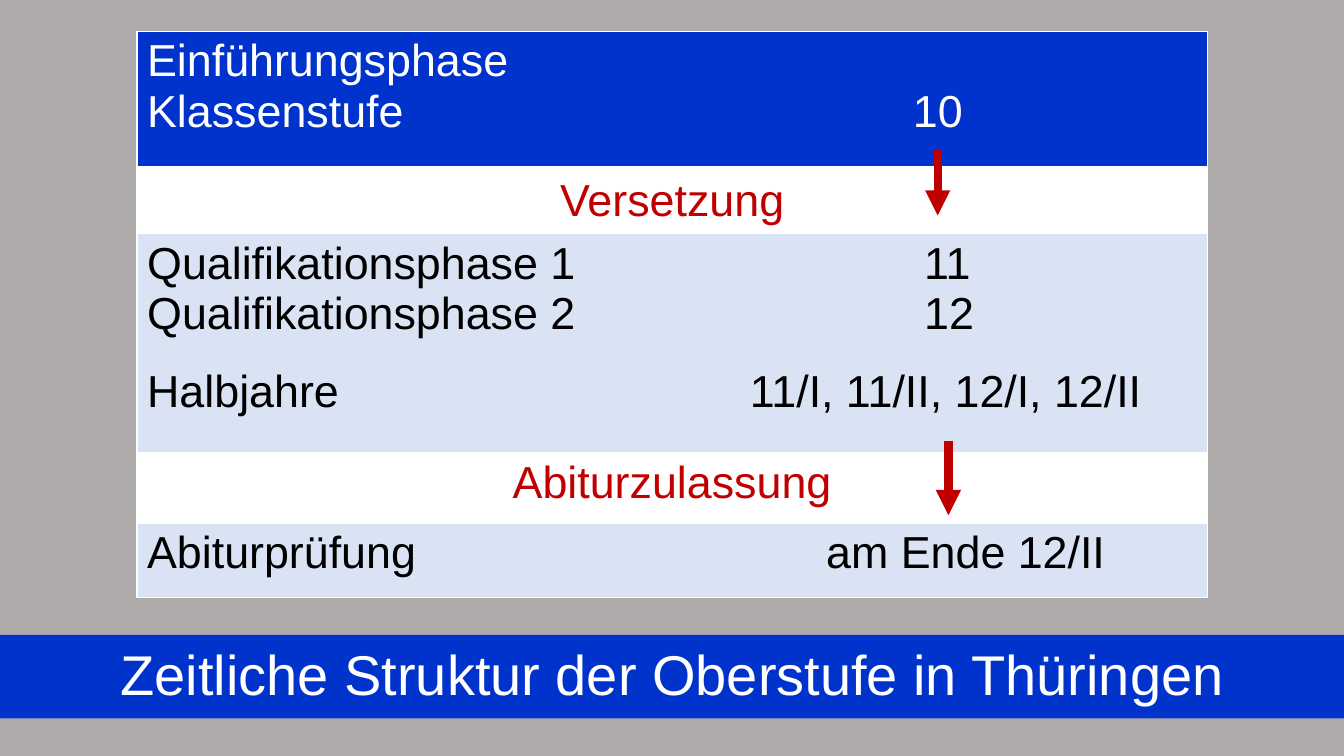
import pptx
import pptx.util
import pptx.dml.color
import pptx.enum.shapes
import pptx.enum.text
import pptx.oxml.ns
from lxml import etree

Pt = pptx.util.Pt
RGBColor = pptx.dml.color.RGBColor
PP_ALIGN = pptx.enum.text.PP_ALIGN
MSO_ANCHOR = pptx.enum.text.MSO_ANCHOR
qn = pptx.oxml.ns.qn

GREY = RGBColor(0xAF, 0xAB, 0xAB)
BLUE = RGBColor(0x00, 0x33, 0xCC)
PALE = RGBColor(0xDA, 0xE3, 0xF3)
RED = RGBColor(0xC0, 0x00, 0x00)
WHITE = RGBColor(0xFF, 0xFF, 0xFF)
BLACK = RGBColor(0x00, 0x00, 0x00)


def write(p, text, size=32, color=BLACK, align=PP_ALIGN.LEFT, before=0, spacing=1.0, tab=None):
    """Fill a paragraph; tab is the position in points of its one tab stop."""
    p.alignment, p.space_before, p.line_spacing = align, Pt(before), spacing
    if tab:
        tabs = etree.SubElement(p._p.get_or_add_pPr(), qn("a:tabLst"))
        etree.SubElement(tabs, qn("a:tab"), pos=str(Pt(tab)), algn="l")
    r = p.add_run()
    r.text = text
    r.font.name, r.font.size, r.font.color.rgb = "Arial", Pt(size), color


class Deck:
    def __init__(self):
        self.prs = pptx.Presentation()
        self.prs.slide_width, self.prs.slide_height = Pt(960), Pt(540)
        self.s = self.prs.slides.add_slide(self.prs.slide_layouts[5])
        fill = self.s.background.fill
        fill.solid()
        fill.fore_color.rgb = GREY

    def title(self, text, top, height):
        sp = self.s.shapes.title
        sp.left, sp.top, sp.width, sp.height = Pt(0), Pt(top), Pt(960), Pt(height)
        sp.fill.solid()
        sp.fill.fore_color.rgb = BLUE
        tf = sp.text_frame
        tf.auto_size = pptx.enum.text.MSO_AUTO_SIZE.NONE
        tf.vertical_anchor, tf.word_wrap = MSO_ANCHOR.TOP, True
        tf.margin_left = tf.margin_right = Pt(7.2)
        tf.margin_top, tf.margin_bottom = Pt(8.6), Pt(3.6)
        write(tf.paragraphs[0], text, size=40, color=WHITE, align=PP_ALIGN.CENTER, spacing=0.9)

    def border(self, cell, side, width):
        ln = etree.SubElement(cell._tc.get_or_add_tcPr(), qn("a:ln" + side), w=str(Pt(width)))
        fill = etree.SubElement(ln, qn("a:solidFill"))
        etree.SubElement(fill, qn("a:srgbClr"), val=str(WHITE))

    def table(self, left, top, width, rows):
        """Each row holds height, fill, anchor and a list of (text, format)."""
        height = sum(row[0] for row in rows)
        table = self.s.shapes.add_table(
            len(rows), 1, Pt(left), Pt(top), Pt(width), Pt(height)).table
        table.first_row = table.horz_banding = False
        for i, (row_height, color, anchor, lines) in enumerate(rows):
            table.rows[i].height = Pt(row_height)
            cell = table.cell(i, 0)
            for side in "LRTB":
                thick = (i, side) in ((0, "B"), (1, "T"))
                self.border(cell, side, 3 if thick else 1)
            cell.fill.solid()
            cell.fill.fore_color.rgb = color
            cell.vertical_anchor = anchor
            tf = cell.text_frame
            for n, (text, style) in enumerate(lines):
                write(tf.add_paragraph() if n else tf.paragraphs[0], text, **style)

    def down_arrow(self, x, top, bottom):
        c = self.s.shapes.add_connector(
            pptx.enum.shapes.MSO_CONNECTOR.STRAIGHT, Pt(x), Pt(top), Pt(x), Pt(bottom))
        c.line.color.rgb, c.line.width = RED, Pt(6)
        etree.SubElement(c.line._get_or_add_ln(), qn("a:tailEnd"), type="triangle")
        etree.SubElement(c._element.spPr, qn("a:effectLst"))


def main():
    deck = Deck()
    deck.title("Zeitliche Struktur der Oberstufe in Thüringen", 453.4, 59.8)
    step = dict(color=RED, align=PP_ALIGN.CENTER)
    deck.table(97.9, 22.3, 764.6, [
        (97.7, BLUE, MSO_ANCHOR.TOP, [
            ("Einführungsphase", dict(color=WHITE)),
            ("Klassenstufe\t10", dict(color=WHITE, tab=547))]),
        (47, WHITE, MSO_ANCHOR.MIDDLE, [("Versetzung", step)]),
        (156.6, PALE, MSO_ANCHOR.TOP, [
            ("Qualifikationsphase 1\t11", dict(tab=555)),
            ("Qualifikationsphase 2\t12", dict(tab=555)),
            ("Halbjahre\t11/I, 11/II, 12/I, 12/II", dict(before=20, tab=430.5))]),
        (50, WHITE, MSO_ANCHOR.TOP, [("Abiturzulassung", step)]),
        (53.3, PALE, MSO_ANCHOR.TOP, [("Abiturprüfung\tam Ende 12/II", dict(tab=485))]),
    ])
    deck.down_arrow(669.8, 107, 154)
    deck.down_arrow(677.5, 315, 368)
    deck.prs.save("out.pptx")


if __name__ == "__main__":
    main()
